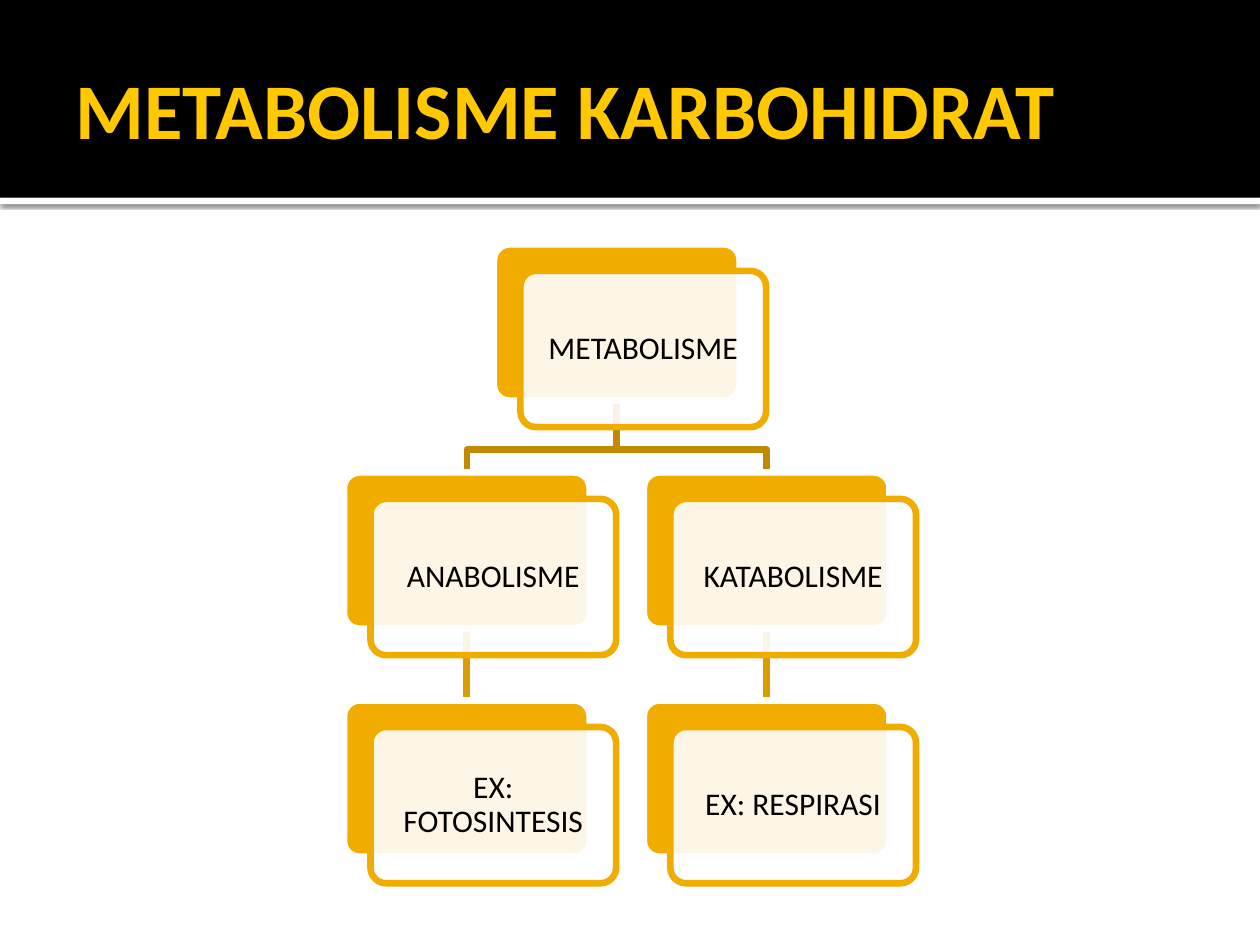
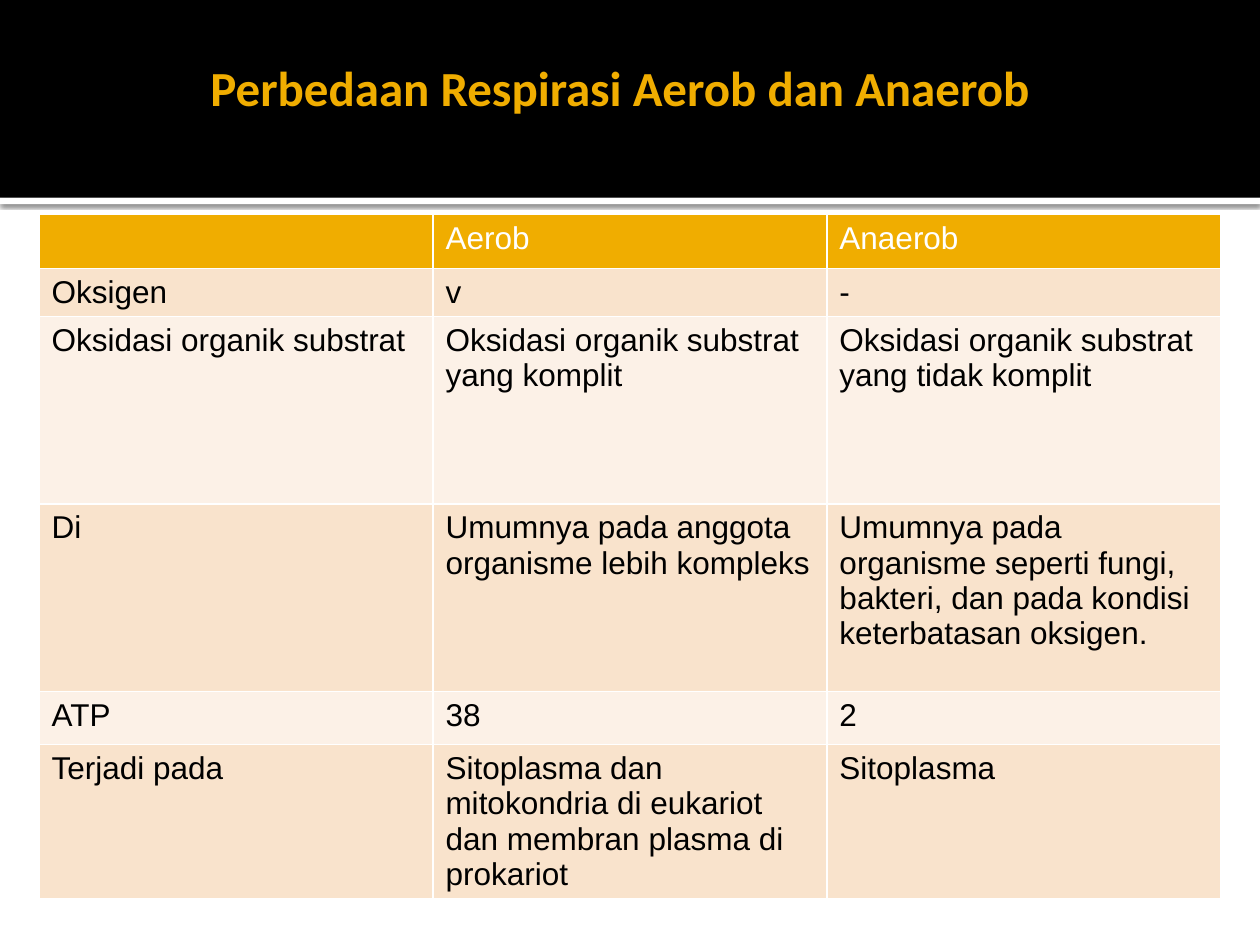
from lxml.etree import SubElement as Sub
from pptx import Presentation
from pptx.dml.color import RGBColor
from pptx.enum.shapes import MSO_CONNECTOR as Link, MSO_SHAPE as Kind
from pptx.enum.text import MSO_ANCHOR as Anchor, MSO_AUTO_SIZE as Auto, PP_ALIGN as Align
from pptx.oxml import parse_xml
from pptx.oxml.ns import nsdecls, qn
from pptx.util import Inches, Pt

BLACK = RGBColor(0x00, 0x00, 0x00)
WHITE = RGBColor(0xFF, 0xFF, 0xFF)
GOLD = RGBColor(0xF0, 0xAD, 0x00)
BRIGHT = RGBColor(0xFF, 0xC8, 0x00)
FORK = RGBColor(0xC0, 0x8B, 0x00)
STEM = RGBColor(0xDA, 0x9D, 0x00)
SAND = RGBColor(0xF9, 0xE3, 0xCC)
CREAM = RGBColor(0xFC, 0xF1, 0xE7)

HEADS = [
    ("METABOLISME KARBOHIDRAT", (0.5, 0.17, 9, 1.37), 45, BRIGHT),
    ("Perbedaan Respirasi Aerob dan Anaerob", (1.57, 0.3, 8.2, 0.78), 28, GOLD),
]
NODES = [
    ("METABOLISME", 0.5, 0),
    ("ANABOLISME", 0, 1),
    ("KATABOLISME", 1, 1),
    ("EX: FOTOSINTESIS", 0, 2),
    ("EX: RESPIRASI", 1, 2),
]
FORKS = [("METABOLISME", "ANABOLISME"), ("METABOLISME", "KATABOLISME")]
STEMS = [("ANABOLISME", "EX: FOTOSINTESIS"), ("KATABOLISME", "EX: RESPIRASI")]
ROWS = [
    ("", "Aerob", "Anaerob"),
    ("Oksigen", "v", "-"),
    ("Oksidasi organik substrat", "Oksidasi organik substrat yang komplit",
     "Oksidasi organik substrat yang tidak komplit"),
    ("Di", "Umumnya pada anggota organisme lebih kompleks",
     "Umumnya pada organisme seperti fungi, bakteri, dan pada kondisi keterbatasan oksigen."),
    ("ATP", "38", "2"),
    ("Terjadi pada", "Sitoplasma dan mitokondria di eukariot dan membran plasma di prokariot",
     "Sitoplasma"),
]
HEIGHTS = [0.43, 0.37, 1.49, 1.49, 0.42, 1.21]

LEFT, TOP, STEP_X, STEP_Y = 2.73, 1.94, 2.38, 1.81
WIDE, HIGH, SHIFT, DROP = 1.95, 1.24, 0.21, 0.39
STROKE = Pt(3.78)
HEAD_BOX = {"vertical_anchor": Anchor.MIDDLE, "word_wrap": True, "auto_size": Auto.NONE,
            "margin_left": Inches(0.1), "margin_right": Inches(0.05),
            "margin_top": Inches(0.05), "margin_bottom": Inches(0.05)}
NODE_BOX = {"vertical_anchor": Anchor.MIDDLE, "word_wrap": True,
            **{f"margin_{side}": Inches(0.07) for side in ("left", "right", "top", "bottom")}}


def apply(item, form):
    """Set every attribute named in a dict of format values."""
    for key, value in form.items():
        setattr(item, key, value)


def write(frame, text, size, color, face="Calibri", bold=False, align=Align.LEFT):
    """Fill a text frame with one formatted paragraph."""
    frame.text = text
    para = frame.paragraphs[0]
    para.alignment = align
    apply(para.font, {"name": face, "size": Pt(size), "bold": bold})
    para.font.color.rgb = color


def block(slide, kind, place, fill, line=None):
    """Add a filled preset shape without a theme shadow."""
    shape = slide.shapes.add_shape(kind, *map(Inches, place))
    shape.shadow.inherit = False
    shape.fill.solid()
    shape.fill.fore_color.rgb = fill
    if line is None:
        shape.line.fill.background()
    else:
        shape.line.color.rgb = line
        shape.line.width = STROKE
    return shape


def add_bands(slide):
    """Put the header band and its shaded rule on the shared layout."""
    layout = slide.slide_layout
    for hold in list(layout.placeholders)[1:]:
        hold._element.getparent().remove(hold._element)
    rule = block(slide, Kind.RECTANGLE, (0, 1.57, 10, 0.05), WHITE)
    glow = Sub(rule._element.spPr.find(qn("a:effectLst")), qn("a:outerShdw"),
               blurRad=str(Pt(2.5)), dist=str(Pt(0.8)), dir="5400000", rotWithShape="0")
    Sub(Sub(glow, qn("a:srgbClr"), val=str(BLACK)), qn("a:alpha"), val="60000")
    band = block(slide, Kind.RECTANGLE, (0, 0, 10, 1.57), BLACK)
    for spot, shape in enumerate((rule, band), 2):
        layout.shapes._spTree.insert(spot, shape._element)


def add_head(slide, text, place, size, color):
    """Place and format the slide title."""
    title = slide.shapes.title
    apply(title, dict(zip(("left", "top", "width", "height"), map(Inches, place))))
    apply(title.text_frame, HEAD_BOX)
    write(title.text_frame, text, size, color, bold=True)


def add_node(slide, text, col, row):
    """Draw a gold card with a veiled text panel over it."""
    x, y = LEFT + col * STEP_X, TOP + row * STEP_Y
    card = block(slide, Kind.ROUNDED_RECTANGLE, (x, y, WIDE, HIGH), GOLD, WHITE)
    panel = block(slide, Kind.ROUNDED_RECTANGLE, (x + SHIFT, y + SHIFT, WIDE, HIGH), WHITE, GOLD)
    for shape in (card, panel):
        shape.adjustments[0] = 0.1
    tint = panel._element.spPr.find(qn("a:solidFill"))[0]
    Sub(tint, qn("a:alpha"), val="90000")
    apply(panel.text_frame, NODE_BOX)
    write(panel.text_frame, text, 18, BLACK, align=Align.CENTER)
    panel.text_frame.paragraphs[0].line_spacing = 0.9
    return card


def add_fork(slide, top, low):
    """Draw a bent line from one card down to another."""
    x, y = top.left + top.width // 2, top.top + top.height
    end, bend = low.left + low.width // 2, y + Inches(DROP)
    pen = slide.shapes.build_freeform(x, y)
    pen.add_line_segments([(x, bend), (end, bend), (end, low.top)], close=False)
    fork = pen.convert_to_shape()
    fork.fill.background()
    fork.shadow.inherit = False
    return fork


def add_stem(slide, top, low):
    """Join two cards with a straight connector."""
    stem = slide.shapes.add_connector(Link.STRAIGHT, 0, 0, 0, 0)
    stem.begin_connect(top, 2)
    stem.end_connect(low, 0)
    return stem


def add_tree(slide):
    """Draw the cards and lay the lines behind them."""
    cards = {text: add_node(slide, text, col, row) for text, col, row in NODES}
    for pairs, draw, color in ((FORKS, add_fork, FORK), (STEMS, add_stem, STEM)):
        for top, low in pairs:
            line = draw(slide, cards[top], cards[low])
            line.line.color.rgb = color
            line.line.width = STROKE
            if draw is add_stem:
                Sub(line._element.spPr, qn("a:effectLst"))
            slide.shapes._spTree.insert(3, line._element)


def edge(cell, side, width):
    """Build one white border line for a cell."""
    return parse_xml(f'<a:{side} {nsdecls("a")} w="{Pt(width)}"><a:solidFill>'
                     f'<a:srgbClr val="{WHITE}"/></a:solidFill></a:{side}>')


def add_grid(slide):
    """Build the table that compares both kinds of respiration."""
    place = map(Inches, (0.31, 1.7, 9.38, sum(HEIGHTS)))
    table = slide.shapes.add_table(len(ROWS), len(ROWS[0]), *place).table
    for r, (texts, high) in enumerate(zip(ROWS, HEIGHTS)):
        table.rows[r].height = Inches(high)
        fill = GOLD if r == 0 else SAND if r % 2 else CREAM
        for c, text in enumerate(texts):
            cell = table.cell(r, c)
            write(cell.text_frame, text, 18, BLACK if r else WHITE, "Arial")
            cell.fill.solid()
            cell.fill.fore_color.rgb = fill
            props = cell._tc.get_or_add_tcPr()
            for spot, side in enumerate(("lnL", "lnR", "lnT", "lnB")):
                props.insert(spot, edge(cell, side, 1))


def main():
    """Build both slides and save them."""
    deck = Presentation()
    apply(deck, {"slide_width": Inches(10), "slide_height": Inches(7.5)})
    slides = [deck.slides.add_slide(deck.slide_layouts[5]) for _ in HEADS]
    add_bands(slides[0])
    for slide, head, draw in zip(slides, HEADS, (add_tree, add_grid)):
        add_head(slide, *head)
        draw(slide)
    deck.save("out.pptx")


if __name__ == "__main__":
    main()
